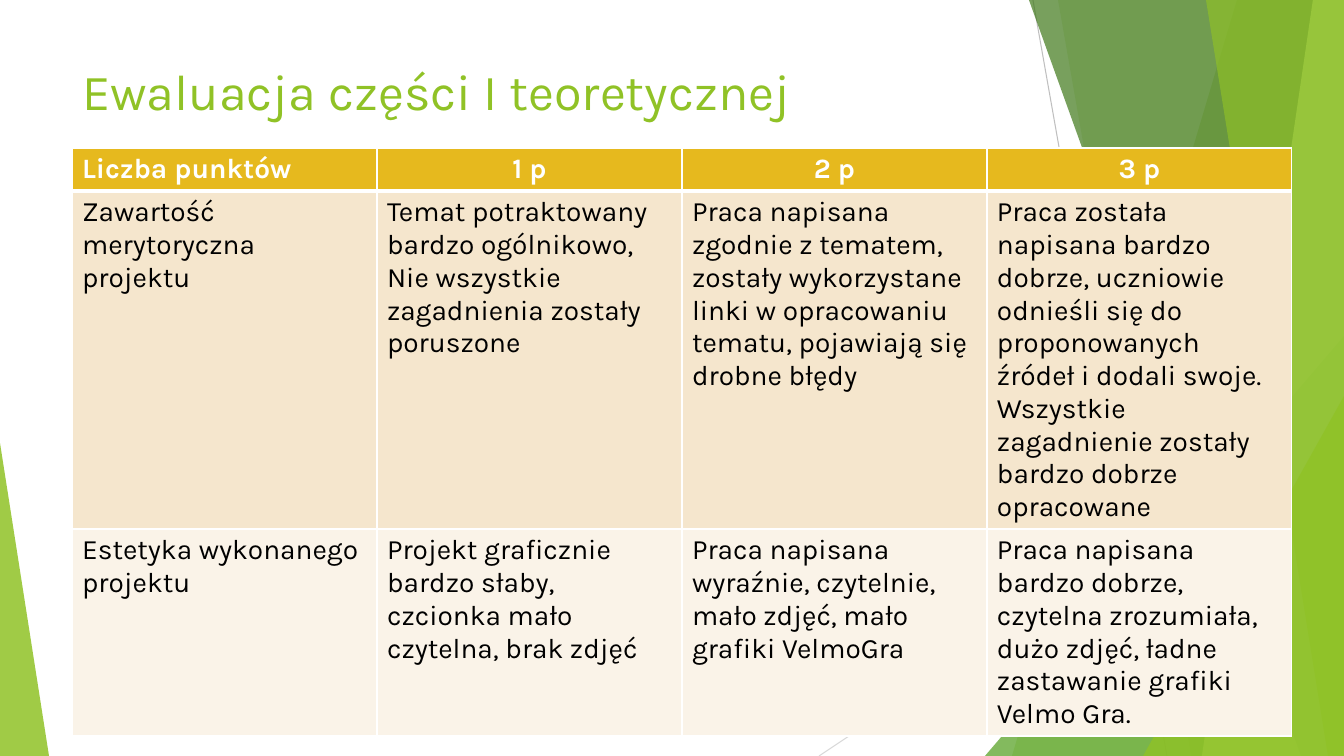
from dataclasses import dataclass

from lxml.etree import SubElement
from pptx import Presentation
from pptx.dml.color import RGBColor
from pptx.enum.shapes import MSO_CONNECTOR, MSO_SHAPE
from pptx.enum.text import MSO_ANCHOR, MSO_AUTO_SIZE, PP_ALIGN
from pptx.oxml import parse_xml
from pptx.oxml.ns import nsdecls, qn
from pptx.util import Pt

EMU_PER_PX = 914400 / 100.8
SLIDE_BOX = (0, 0, 1344, 756)
TITLE_BOX = (72, 50, 1036, 98)
TABLE_BOX = (72, 148, 1220, 588)
ROW_HEIGHTS = (43, 338, 207)


@dataclass(frozen=True)
class Theme:
    """Colours and type sizes of the slide."""
    font: str = "Karla"
    title_size: int = 36
    table_size: int = 20
    green: str = "90C226"
    mid_green: str = "54A021"
    dark_green: str = "3F7819"
    pale_green: str = "C0E474"
    rule: str = "BFBFBF"
    pale_rule: str = "D9D9D9"
    white: str = "FFFFFF"
    black: str = "000000"
    row_fills: tuple = ("E6B91E", "F5E6CD", "FAF3E8")


THEME = Theme()

RULES = [
    (1033, 0, 1167, 756, THEME.rule),
    (1344, 406, 819, 756, THEME.pale_rule),
]
BACK_FACETS = [(1237, 1012, THEME.green, 30), (1058, 1191, THEME.green, 20)]
FRONT_FACETS = [
    (1029, 1301, THEME.dark_green, 70),
    (1313, 1202, THEME.pale_green, 70),
    (1206, 1328, THEME.green, 65),
]
BACK_TRIANGLE = (985, 336, 359, 420)
FRONT_TRIANGLE = (1143, 396, 201, 360)
LEFT_TRIANGLE = (0, 443, 49, 313)

TITLE = "Ewaluacja części I teoretycznej"
RUBRIC = [
    ["Liczba punktów", "1 p", "2 p", "3 p"],
    [
        "Zawartość merytoryczna projektu",
        "Temat potraktowany bardzo ogólnikowo,\n"
        "Nie wszystkie zagadnienia zostały poruszone",
        "Praca napisana zgodnie z tematem, zostały wykorzystane linki "
        "w opracowaniu tematu, pojawiają się drobne błędy",
        "Praca została napisana bardzo dobrze, uczniowie odnieśli się do "
        "proponowanych źródeł i dodali swoje.\n"
        "Wszystkie zagadnienie zostały bardzo dobrze opracowane",
    ],
    [
        "Estetyka wykonanego projektu",
        "Projekt graficznie bardzo słaby, czcionka mało czytelna, brak zdjęć",
        "Praca napisana wyraźnie, czytelnie, mało zdjęć, mało grafiki VelmoGra",
        "Praca napisana bardzo dobrze, czytelna zrozumiała, dużo zdjęć, "
        "ładne zastawanie grafiki Velmo Gra.",
    ],
]


def px(*lengths):
    """Turn pixel lengths into a list of EMU."""
    return [round(length * EMU_PER_PX) for length in lengths]


def format_runs(text_frame, size, color, bold=False):
    """Give every run of a text frame the same look."""
    for paragraph in text_frame.paragraphs:
        for run in paragraph.runs:
            run.font.name = THEME.font
            run.font.size = Pt(size)
            run.font.bold = bold
            run.font.color.rgb = RGBColor.from_string(color)


def paint(shape, color, opacity):
    """Fill a shape with a see-through colour and no outline."""
    shape.shadow.inherit = False
    shape.line.fill.background()
    shape.fill.solid()
    shape.fill.fore_color.rgb = RGBColor.from_string(color)
    color_element = shape._element.spPr.find(qn("a:solidFill"))[0]
    SubElement(color_element, qn("a:alpha")).set("val", str(opacity * 1000))


def add_rule(slide, start_x, start_y, end_x, end_y, color):
    """Draw one thin straight line."""
    rule = slide.shapes.add_connector(
        MSO_CONNECTOR.STRAIGHT, *px(start_x, start_y, end_x, end_y))
    rule.line.color.rgb = RGBColor.from_string(color)
    rule.line.width = Pt(0.75)
    SubElement(rule._element.spPr, qn("a:effectLst"))


def add_facet(slide, box, top_x, bottom_x, color, opacity):
    """Draw a band from a slanted left edge to the right side of the box."""
    left, top, width, height = box
    right, bottom = left + width, top + height
    builder = slide.shapes.build_freeform(left + top_x, top, scale=EMU_PER_PX)
    builder.add_line_segments(
        [(right, top), (right, bottom), (left + bottom_x, bottom)], close=True)
    paint(builder.convert_to_shape(), color, opacity)


def add_triangle(slide, box, apex, color, opacity):
    """Draw a right triangle with its apex at the given share of the width."""
    triangle = slide.shapes.add_shape(MSO_SHAPE.ISOSCELES_TRIANGLE, *px(*box))
    triangle.adjustments[0] = apex
    paint(triangle, color, opacity)


def add_decoration(slide, box):
    """Draw the green facets at the slide's edges, from back to front."""
    for rule in RULES:
        add_rule(slide, *rule)
    for facet in BACK_FACETS:
        add_facet(slide, box, *facet)
    add_triangle(slide, BACK_TRIANGLE, 1, THEME.mid_green, 72)
    for facet in FRONT_FACETS:
        add_facet(slide, box, *facet)
    add_triangle(slide, FRONT_TRIANGLE, 1, THEME.green, 80)
    add_triangle(slide, LEFT_TRIANGLE, 0, THEME.green, 85)


def add_title(slide, box):
    """Place the title placeholder in front of the decoration."""
    title = slide.shapes.title
    title.left, title.top, title.width, title.height = px(*box)
    title._element.getparent().append(title._element)
    text_frame = title.text_frame
    text_frame.text = TITLE
    text_frame.word_wrap = True
    text_frame.auto_size = MSO_AUTO_SIZE.NONE
    text_frame.vertical_anchor = MSO_ANCHOR.TOP
    text_frame.margin_top = px(10)[0]
    text_frame.paragraphs[0].alignment = PP_ALIGN.LEFT
    format_runs(text_frame, THEME.title_size, THEME.green)


def set_borders(cell, top_width, bottom_width):
    """Give a cell white borders, one point wide at its sides."""
    widths = {"lnL": 1, "lnR": 1, "lnT": top_width, "lnB": bottom_width}
    for position, (side, width) in enumerate(widths.items()):
        border = parse_xml(
            f'<a:{side} {nsdecls("a")} w="{Pt(width)}"><a:solidFill>'
            f'<a:srgbClr val="{THEME.white}"/></a:solidFill></a:{side}>')
        cell._tc.get_or_add_tcPr().insert(position, border)


def add_rubric(slide, box):
    """Build the table of criteria and points."""
    table = slide.shapes.add_table(len(RUBRIC), len(RUBRIC[0]), *px(*box)).table
    table.horz_banding = False
    for row, height in zip(table.rows, ROW_HEIGHTS):
        row.height = px(height)[0]
    for row_index, texts in enumerate(RUBRIC):
        is_header = row_index == 0
        for column_index, text in enumerate(texts):
            cell = table.cell(row_index, column_index)
            cell.fill.solid()
            cell.fill.fore_color.rgb = RGBColor.from_string(
                THEME.row_fills[row_index])
            set_borders(cell, 3 if row_index == 1 else 1, 3 if is_header else 1)
            cell.text_frame.text = text
            if is_header and column_index > 0:
                cell.text_frame.paragraphs[0].alignment = PP_ALIGN.CENTER
            color = THEME.white if is_header else THEME.black
            format_runs(cell.text_frame, THEME.table_size, color, is_header)


def main():
    """Build the slide and save it."""
    presentation = Presentation()
    presentation.slide_width, presentation.slide_height = px(*SLIDE_BOX[2:])
    slide = presentation.slides.add_slide(presentation.slide_layouts[5])
    add_decoration(slide, SLIDE_BOX)
    add_title(slide, TITLE_BOX)
    add_rubric(slide, TABLE_BOX)
    presentation.save("out.pptx")


if __name__ == "__main__":
    main()
